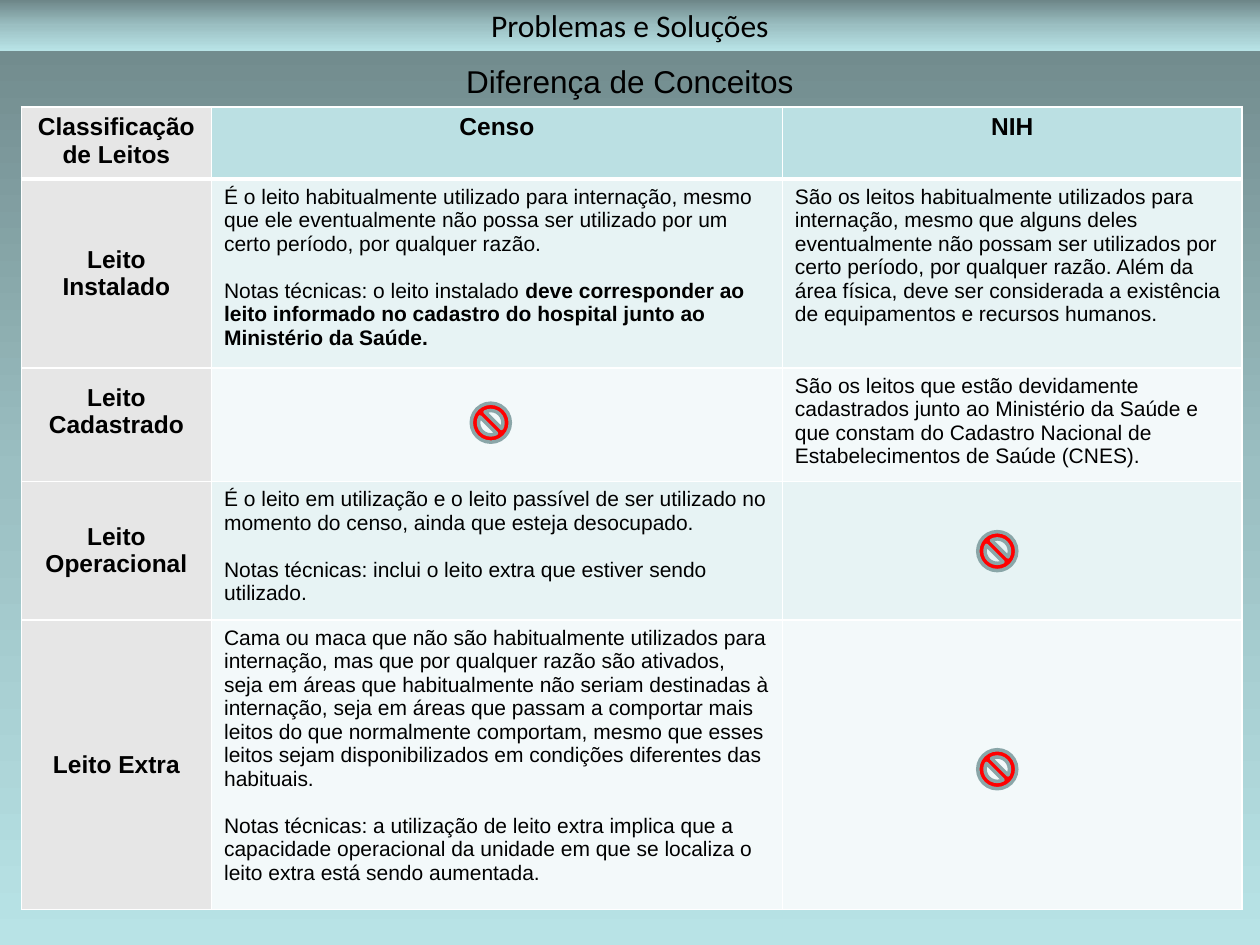
import copy

import pptx
import pptx.dml.color
import pptx.enum.shapes
import pptx.enum.text
import pptx.oxml
import pptx.oxml.ns
import pptx.util

Pt = pptx.util.Pt
CENTER = pptx.enum.text.PP_ALIGN.CENTER
MIDDLE = pptx.enum.text.MSO_ANCHOR.MIDDLE
SHAPES = pptx.enum.shapes.MSO_SHAPE

COLORS = {
    "text": "000000",
    "deep": "6D8688",
    "mid": "9BBFC2",
    "pale": "B8E3E6",
    "label": "E6E6E6",
    "header": "BBE0E3",
    "odd": "E7F3F4",
    "even": "F3F9FA",
    "border": "FFFFFF",
    "ban": "FF0000",
    "ban_edge": "8AA6A8",
}

COLUMN_WIDTHS = [108.7, 326.2, 262.8]
ROW_HEIGHTS = [41, 108, 64.8, 79.2, 165.6]
HEADERS = [["Classificação", "de Leitos"], ["Censo"], ["NIH"]]
BEDS = [
    (
        ["Leito Instalado"],
        [
            "É o leito habitualmente utilizado para internação, mesmo que ele eventualmente "
            "não possa ser utilizado por um certo período, por qualquer razão.",
            "Notas técnicas: o leito instalado **deve corresponder ao leito informado no "
            "cadastro do hospital junto ao Ministério da Saúde.",
        ],
        [
            "São os leitos habitualmente utilizados para internação, mesmo que alguns deles "
            "eventualmente não possam ser utilizados por certo período, por qualquer razão. "
            "Além da área física, deve ser considerada a existência de equipamentos e "
            "recursos humanos."
        ],
    ),
    (
        ["Leito", "Cadastrado"],
        [],
        [
            "São os leitos que estão devidamente cadastrados junto ao Ministério da Saúde e "
            "que constam do Cadastro Nacional de Estabelecimentos de Saúde (CNES)."
        ],
    ),
    (
        ["Leito", "Operacional"],
        [
            "É o leito em utilização e o leito passível de ser utilizado no momento do censo, "
            "ainda que esteja desocupado.",
            "Notas técnicas: inclui o leito extra que estiver sendo utilizado.",
        ],
        [],
    ),
    (
        ["Leito Extra"],
        [
            "Cama ou maca que não são habitualmente utilizados para internação, mas que por "
            "qualquer razão são ativados, seja em áreas que habitualmente não seriam "
            "destinadas à internação, seja em áreas que passam a comportar mais leitos do "
            "que normalmente comportam, mesmo que esses leitos sejam disponibilizados em "
            "condições diferentes das habituais.",
            "Notas técnicas: a utilização de leito extra implica que a capacidade operacional "
            "da unidade em que se localiza o leito extra está sendo aumentada.",
        ],
        [],
    ),
]
BAN_POSITIONS = [(269.3, 230.4), (558.7, 303.8), (558.7, 428.4)]


class SlideBuilder:
    def __init__(self, slide, font="Arial"):
        self.slide = slide
        self.font = font

    def rgb(self, name):
        return pptx.dml.color.RGBColor.from_string(COLORS[name])

    def gradient(self, fill, element):
        fill.gradient()
        fill.gradient_angle = 270
        stops = element.xpath(".//a:gsLst")[0]
        stops.append(copy.deepcopy(stops[-1]))
        for stop, name, position in zip(fill.gradient_stops, ("deep", "mid", "pale"), (0, 0.5, 1)):
            stop.color.rgb = self.rgb(name)
            stop.position = position

    def background(self):
        self.gradient(self.slide.background.fill, self.slide.element)

    def put_text(self, frame, lines, size, bold=False, centered=True, gap=0, font=None):
        frame.word_wrap = True
        for index, line in enumerate(lines):
            paragraph = frame.add_paragraph() if index else frame.paragraphs[0]
            plain, *strong = line.split("**")
            paragraph.add_run().text = plain
            for text in strong:
                run = paragraph.add_run()
                run.text = text
                run.font.bold = True
            if centered:
                paragraph.alignment = CENTER
            if index and gap:
                paragraph.space_before = Pt(gap)
            paragraph.font.name = font or self.font
            paragraph.font.size = Pt(size)
            paragraph.font.bold = bold
            paragraph.font.color.rgb = self.rgb("text")

    def bar(self, text, height, font):
        bar = self.slide.shapes.add_shape(SHAPES.RECTANGLE, 0, 0, Pt(720), Pt(height))
        bar.shadow.inherit = False
        bar.line.fill.background()
        self.gradient(bar.fill, bar.element)
        self.put_text(bar.text_frame, [text], 18, font=font)

    def heading(self, text, top, height):
        box = self.slide.shapes.add_textbox(0, Pt(top), Pt(720), Pt(height))
        self.put_text(box.text_frame, [text], 18)

    def style_cell(self, cell, fill, header):
        properties = cell._tc.get_or_add_tcPr()
        for side in "LRTB":
            width = 3 if header and side == "B" else 1
            properties.append(pptx.oxml.parse_xml(
                f'<a:ln{side} {pptx.oxml.ns.nsdecls("a")} w="{Pt(width)}"><a:solidFill>'
                f'<a:srgbClr val="{COLORS["border"]}"/></a:solidFill></a:ln{side}>'
            ))
        cell.fill.solid()
        cell.fill.fore_color.rgb = self.rgb(fill)

    def table(self, left, top):
        table = self.slide.shapes.add_table(
            len(ROW_HEIGHTS), len(COLUMN_WIDTHS), Pt(left), Pt(top),
            Pt(sum(COLUMN_WIDTHS)), Pt(sum(ROW_HEIGHTS)),
        ).table
        for column, width in zip(table.columns, COLUMN_WIDTHS):
            column.width = Pt(width)
        for row, height in zip(table.rows, ROW_HEIGHTS):
            row.height = Pt(height)
        for r, contents in enumerate([HEADERS, *BEDS]):
            for c, lines in enumerate(contents):
                cell = table.cell(r, c)
                header, label = r == 0, c == 0
                title = header or label
                band = "header" if header else "odd" if r % 2 else "even"
                self.style_cell(cell, "label" if label else band, header)
                self.put_text(cell.text_frame, lines, 14 if title else 12, title, title,
                              0 if title else 13.4)
                if label and not header:
                    cell.vertical_anchor = MIDDLE
        return table

    def ban(self, left, top, size=22.3):
        sign = self.slide.shapes.add_shape(SHAPES.NO_SYMBOL, Pt(left), Pt(top), Pt(size), Pt(size))
        sign.shadow.inherit = False
        sign.fill.solid()
        sign.fill.fore_color.rgb = self.rgb("ban")
        sign.line.color.rgb = self.rgb("ban_edge")
        sign.line.width = Pt(2)


def main():
    deck = pptx.Presentation()
    deck.slide_width, deck.slide_height = Pt(720), Pt(540)
    builder = SlideBuilder(deck.slides.add_slide(deck.slide_layouts[6]))
    builder.background()
    builder.bar("Problemas e Soluções", 29, "Calibri")
    builder.heading("Diferença de Conceitos", 32, 29)
    beds = builder.table(12.2, 61.2)
    beds.cell(2, 0).margin_bottom = Pt(18.6)
    for left, top in BAN_POSITIONS:
        builder.ban(left, top)
    deck.save("out.pptx")


if __name__ == "__main__":
    main()
